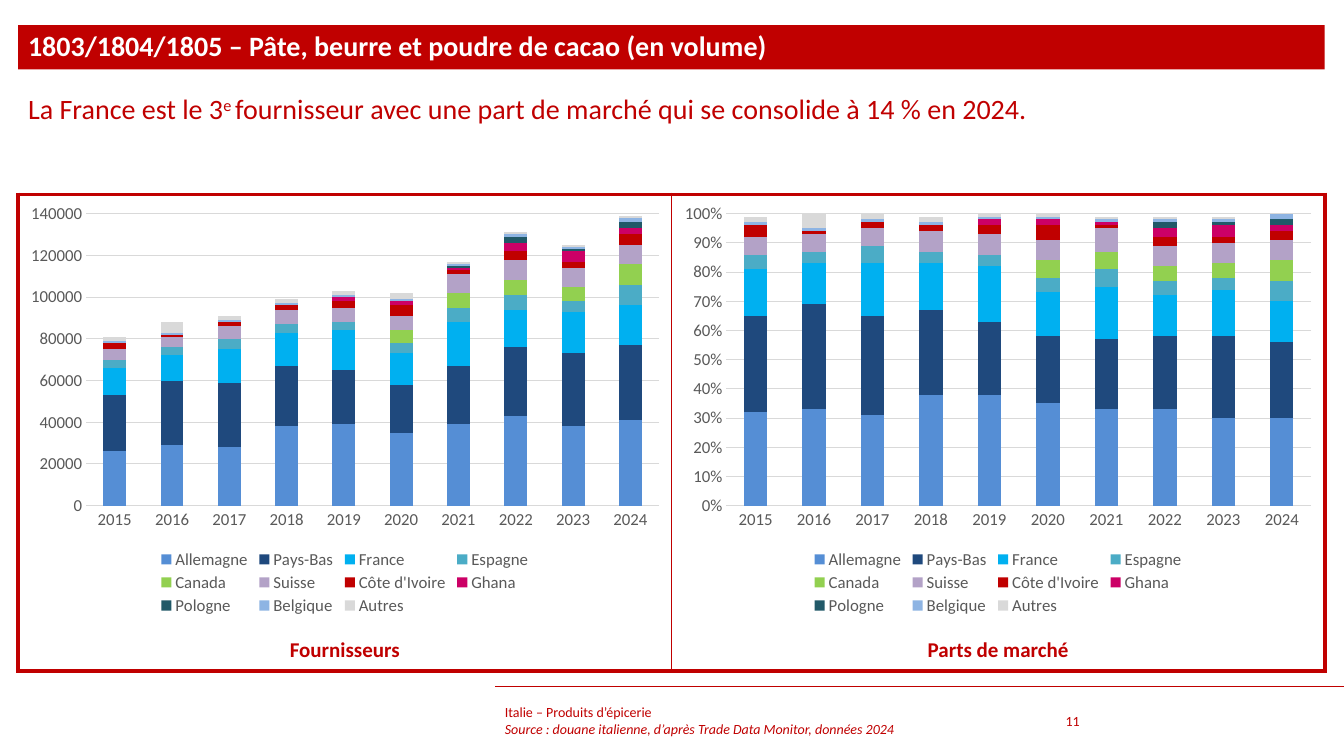
import pptx
import pptx.chart.data
import pptx.dml.color
import pptx.enum.chart
import pptx.enum.shapes
import pptx.enum.text
import pptx.oxml
import pptx.oxml.ns
import pptx.util
from lxml import etree

# Content
TITLE = "1803/1804/1805 – Pâte, beurre et poudre de cacao (en volume)"
MESSAGE = [("La France est le 3", {}), ("e ", {"baseline": 30000}),
           ("fournisseur avec une part de marché qui se consolide à 14 % en 2024.", {})]
FOOTER = [[("Italie – Produits d’épicerie", {})],
          [("Source : douane italienne, d’après Trade Data Monitor, données 2024", {"italic": True})]]
PAGE = "11"
YEARS = [str(year) for year in range(2015, 2025)]

# Country, colour, thousands of units per year, market share in % per year
SUPPLIERS = [
    ("Allemagne", "558ED5", [26, 29, 28, 38, 39, 35, 39, 43, 38, 41], [32, 33, 31, 38, 38, 35, 33, 33, 30, 30]),
    ("Pays-Bas", "1F497D", [27, 31, 31, 29, 26, 23, 28, 33, 35, 36], [33, 36, 34, 29, 25, 23, 24, 25, 28, 26]),
    ("France", "00B0F0", [13, 12, 16, 16, 19, 15, 21, 18, 20, 19], [16, 14, 18, 16, 19, 15, 18, 14, 16, 14]),
    ("Espagne", "4BACC6", [4, 4, 5, 4, 4, 5, 7, 7, 5, 10], [5, 4, 6, 4, 4, 5, 6, 5, 4, 7]),
    ("Canada", "92D050", [0, 0, 0, 0, 0, 6, 7, 7, 7, 10], [0, 0, 0, 0, 0, 6, 6, 5, 5, 7]),
    ("Suisse", "B3A2C7", [5, 5, 6, 7, 7, 7, 9, 10, 9, 9], [6, 6, 6, 7, 7, 7, 8, 7, 7, 7]),
    ("Côte d'Ivoire", "C00000", [3, 1, 2, 2, 3, 5, 2, 4, 3, 5], [4, 1, 2, 2, 3, 5, 1, 3, 2, 3]),
    ("Ghana", "CC0066", [0, 0, 0, 0, 2, 2, 1, 4, 5, 3], [0, 0, 0, 0, 2, 2, 1, 3, 4, 2]),
    ("Pologne", "215968", [0, 0, 0, 0, 0, 0, 1, 3, 1, 3], [0, 0, 0, 0, 0, 0, 0, 2, 1, 2]),
    ("Belgique", "8EB4E3", [1, 1, 1, 1, 1, 1, 1, 1, 1, 2], [1, 1, 1, 1, 1, 1, 1, 1, 1, 2]),
    ("Autres", "D9D9D9", [2, 5, 2, 2, 2, 3, 1, 1, 1, 1], [2, 5, 3, 2, 2, 3, 1, 1, 1, 1]),
]
# plot is the inner plotting area, in shares of the chart
PANELS = [
    dict(caption="Fournisseurs", values=[[v * 1000 for v in s[2]] for s in SUPPLIERS],
         top=140000, step=20000, format="General", plot=(0.104, 0.045, 0.877, 0.685)),
    dict(caption="Parts de marché", values=[[v / 100 for v in s[3]] for s in SUPPLIERS],
         top=1, step=0.1, format="0%", plot=(0.084, 0.045, 0.895, 0.685)),
]
LEGEND_AREA = (0.21, 0.825, 0.58, 0.17)

THEME = dict(font="Calibri", red="C00000", white="FFFFFF", axis="595959", grid="D9D9D9",
             heading=20, caption=15, chart=12, footer=10, frame=3, divider=1, hairline=0.5, gridline=0.75)

# Layout grid, in inches
SLIDE_W, SLIDE_H = 13.33, 7.5
MARGIN = 0.18
PANEL_W, PANEL_H, CHART_H = 6.48, 4.73, 4.23
PANEL_TOP, CAPTION_TOP = 1.93, 6.27
FOOTER_LEFT, FOOTER_TOP, FOOTER_H = 4.91, 6.95, 0.4

inches, points = pptx.util.Inches, pptx.util.Pt
ANCHOR, ALIGN = pptx.enum.text.MSO_ANCHOR, pptx.enum.text.PP_ALIGN


def rgb(name):
    return pptx.dml.color.RGBColor.from_string(THEME.get(name, name))


def box(*lengths):
    return [inches(length) for length in lengths]


def write(shape, paragraphs, size, color="red", bold=False, anchor=ANCHOR.TOP,
          align=ALIGN.LEFT, spacing=None):
    """Fill a shape with paragraphs, each a list of (text, run format)."""
    frame = shape.text_frame
    frame.word_wrap = True
    frame.vertical_anchor = anchor
    for number, runs in enumerate(paragraphs):
        paragraph = frame.add_paragraph() if number else frame.paragraphs[0]
        paragraph.alignment = align
        if spacing:
            paragraph.line_spacing = spacing
        for text, style in runs:
            run = paragraph.add_run()
            run.text = text
            run.font.name, run.font.size = THEME["font"], points(THEME[size])
            run.font.bold, run.font.italic = bold, style.get("italic", False)
            run.font.color.rgb = rgb(color)
            if "baseline" in style:
                run.font._element.set("baseline", str(style["baseline"]))


def set_border(cell, side, width):
    border = etree.SubElement(cell._tc.get_or_add_tcPr(), pptx.oxml.ns.qn("a:ln" + side),
                              w=str(points(width)))
    fill = etree.SubElement(border, pptx.oxml.ns.qn("a:solidFill"))
    etree.SubElement(fill, pptx.oxml.ns.qn("a:srgbClr"), val=THEME["red"])


def manual_layout(area, inner):
    layout = etree.Element(pptx.oxml.ns.qn("c:layout"))
    manual = etree.SubElement(layout, pptx.oxml.ns.qn("c:manualLayout"))
    settings = [("layoutTarget", "inner")] if inner else []
    settings += [("xMode", "edge"), ("yMode", "edge")] + list(zip("xywh", area))
    for tag, value in settings:
        etree.SubElement(manual, pptx.oxml.ns.qn("c:" + tag), val=str(value))
    return layout


def style_font(font):
    font.name, font.size = THEME["font"], points(THEME["chart"])
    font.color.rgb = rgb("axis")


def add_panel_chart(slide, panel, left):
    data = pptx.chart.data.CategoryChartData(number_format=panel["format"])
    data.categories = YEARS
    for supplier, values in zip(SUPPLIERS, panel["values"]):
        data.add_series(supplier[0], values)
    chart = slide.shapes.add_chart(pptx.enum.chart.XL_CHART_TYPE.COLUMN_STACKED,
                                   *box(left, PANEL_TOP, PANEL_W, CHART_H), data).chart
    chart.has_title = False
    style_font(chart.font)
    bars = chart.plots[0]
    bars.vary_by_categories = False
    bars.gap_width, bars.overlap = 150, 100
    for series, supplier in zip(bars.series, SUPPLIERS):
        series.format.fill.solid()
        series.format.fill.fore_color.rgb = rgb(supplier[1])

    # Axes
    years, amounts = chart.category_axis, chart.value_axis
    for axis in (years, amounts):
        axis.major_tick_mark = axis.minor_tick_mark = pptx.enum.chart.XL_TICK_MARK.NONE
        style_font(axis.tick_labels.font)
    amounts.minimum_scale, amounts.maximum_scale = 0, panel["top"]
    amounts.major_unit = panel["step"]
    amounts.tick_labels.number_format = panel["format"]
    amounts.tick_labels.number_format_is_linked = False
    amounts.format.line.fill.background()
    amounts.has_major_gridlines = True
    for line in (years.format.line, amounts.major_gridlines.format.line):
        line.color.rgb, line.width = rgb("grid"), points(THEME["gridline"])

    # Legend and plot areas
    chart.has_legend = True
    legend = chart.legend
    legend.position = pptx.enum.chart.XL_LEGEND_POSITION.BOTTOM
    legend.include_in_layout = False
    style_font(legend.font)
    legend._element.find(pptx.oxml.ns.qn("c:legendPos")).addnext(manual_layout(LEGEND_AREA, False))
    plot_area = chart._chartSpace.chart.plotArea
    for old in plot_area.findall(pptx.oxml.ns.qn("c:layout")):
        plot_area.remove(old)
    plot_area.insert(0, manual_layout(panel["plot"], True))


def main():
    deck = pptx.Presentation()
    deck.slide_width, deck.slide_height = box(SLIDE_W, SLIDE_H)
    slide = deck.slides.add_slide(deck.slide_layouts[6])
    shapes = slide.shapes

    # Footer rule
    rule = shapes.add_connector(pptx.enum.shapes.MSO_CONNECTOR.STRAIGHT,
                                *box(SLIDE_W, 6.81, FOOTER_LEFT, 6.81))
    rule.line.color.rgb, rule.line.width = rgb("red"), points(THEME["hairline"])
    etree.SubElement(rule._element.spPr, pptx.oxml.ns.qn("a:effectLst"))

    # Two-panel frame
    panels = shapes.add_table(1, 2, *box(MARGIN, PANEL_TOP, 2 * PANEL_W, PANEL_H)).table
    panels.first_row = panels.horz_banding = False
    for column, (left_edge, right_edge) in enumerate([("frame", "divider"), ("divider", "frame")]):
        cell = panels.cell(0, column)
        for side, edge in zip("LRTB", (left_edge, right_edge, "frame", "frame")):
            set_border(cell, side, THEME[edge])
        cell.fill.background()

    # Charts and captions
    for column, panel in enumerate(PANELS):
        left = MARGIN + column * PANEL_W
        caption = shapes.add_textbox(*box(left, CAPTION_TOP, PANEL_W, 0.35))
        write(caption, [[(panel["caption"], {})]], "caption", bold=True, align=ALIGN.CENTER)
        add_panel_chart(slide, panel, left)

    # Title band and message
    band = shapes.add_shape(pptx.enum.shapes.MSO_SHAPE.RECTANGLE,
                            *box(MARGIN, 0.25, 2 * PANEL_W, 0.44))
    band.shadow.inherit = False
    band.fill.solid()
    band.fill.fore_color.rgb = rgb("red")
    band.line.fill.background()
    write(band, [[(TITLE, {})]], "heading", color="white", bold=True, anchor=ANCHOR.MIDDLE, spacing=0.9)
    message = shapes.add_textbox(*box(MARGIN, 0.9, 2 * PANEL_W, 0.81))
    write(message, [MESSAGE], "heading", spacing=0.9)

    # Footer
    for left, width, lines in [(FOOTER_LEFT, 5.43, FOOTER), (10.47, 0.99, [[(PAGE, {})]])]:
        note = shapes.add_textbox(*box(left, FOOTER_TOP, width, FOOTER_H))
        write(note, lines, "footer", anchor=ANCHOR.MIDDLE)

    deck.save("out.pptx")


if __name__ == "__main__":
    main()
